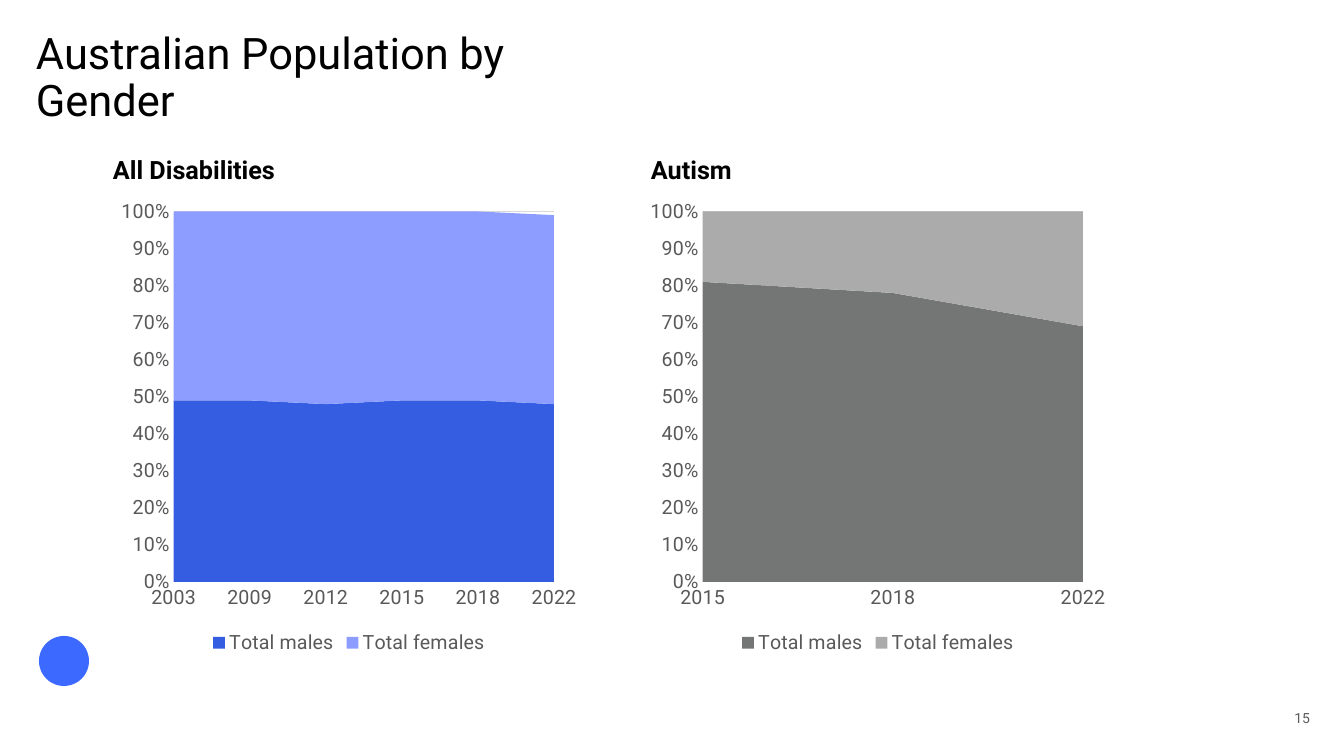
import pptx
import pptx.util
import pptx.chart.data
import pptx.dml.color
import pptx.enum.chart
import pptx.enum.shapes
import pptx.enum.text

SCALE = 914400 / 100.8
FONT = "Roboto"
COLORS = {
    "black": "000000", "gray": "595959", "page": "5B5B5B", "grid": "D9D9D9",
    "mark": "3C69FF", "blue": "355DE2", "sky": "8D9DFF",
    "dark": "747575", "light": "ABABAB",
}


def box(*sizes):
    return [pptx.util.Emu(round(size * SCALE)) for size in sizes]


def style(font, size, color, bold=False):
    font.name = FONT
    font.size = pptx.util.Pt(size)
    font.bold = bold
    font.color.rgb = pptx.dml.color.RGBColor.from_string(COLORS[color])


deck = pptx.Presentation()
deck.slide_width, deck.slide_height = box(1344, 756)
slide = deck.slides.add_slide(deck.slide_layouts[5])
shapes = slide.shapes

# Title
title = shapes.title
title.left, title.top, title.width, title.height = box(36, 32, 596, 136)
frame = title.text_frame
frame.text = "Australian Population by Gender"
frame.word_wrap = True
frame.auto_size = pptx.enum.text.MSO_AUTO_SIZE.NONE
frame.vertical_anchor = pptx.enum.text.MSO_ANCHOR.TOP
frame.margin_left = frame.margin_top = frame.margin_right = frame.margin_bottom = 0
para = frame.paragraphs[0]
para.alignment = pptx.enum.text.PP_ALIGN.LEFT
para.line_spacing = 0.9
style(para.font, 31, "black")

# Plain mark in the corner
mark = shapes.add_shape(pptx.enum.shapes.MSO_SHAPE.OVAL, *box(39, 636, 50, 50))
mark.shadow.inherit = False
mark.fill.solid()
mark.fill.fore_color.rgb = pptx.dml.color.RGBColor.from_string(COLORS["mark"])
mark.line.fill.background()

# Page number
frame = shapes.add_textbox(*box(1264, 706, 46, 20)).text_frame
frame.text = "15"
frame.word_wrap = True
frame.vertical_anchor = pptx.enum.text.MSO_ANCHOR.BOTTOM
frame.margin_left = frame.margin_top = frame.margin_right = frame.margin_bottom = 0
frame.paragraphs[0].alignment = pptx.enum.text.PP_ALIGN.RIGHT
style(frame.paragraphs[0].font, 10, "page")

# Headings with their area charts: heading, lefts, years, shares, fills
panels = [
    ("All Disabilities", 103, 112, ["2003", "2009", "2012", "2015", "2018", "2022"],
     [0.49, 0.49, 0.48, 0.49, 0.49, 0.48], [0.51, 0.51, 0.52, 0.51, 0.51, 0.51],
     ["blue", "sky"]),
    ("Autism", 641, 641, ["2015", "2018", "2022"],
     [0.81, 0.78, 0.69], [0.2, 0.23, 0.31], ["dark", "light"]),
]
for heading, text_left, chart_left, years, males, females, fills in panels:
    frame = shapes.add_textbox(*box(text_left, 149, 408, 40)).text_frame
    frame.text = heading
    frame.word_wrap = True
    frame.auto_size = pptx.enum.text.MSO_AUTO_SIZE.SHAPE_TO_FIT_TEXT
    style(frame.paragraphs[0].font, 18, "black", True)

    data = pptx.chart.data.CategoryChartData(number_format="0%")
    data.categories = years
    data.add_series("Total males", males)
    data.add_series("Total females", females)
    chart = shapes.add_chart(pptx.enum.chart.XL_CHART_TYPE.AREA_STACKED,
                             *box(chart_left, 190, 474, 469), data).chart
    chart.has_title = False
    style(chart.font, 14, "black")
    chart.plots[0].vary_by_categories = False
    for series, fill in zip(chart.plots[0].series, fills):
        series.format.fill.solid()
        series.format.fill.fore_color.rgb = pptx.dml.color.RGBColor.from_string(COLORS[fill])
        series.format.line.fill.background()

    # Axes
    years_axis, share_axis = chart.category_axis, chart.value_axis
    for axis in (years_axis, share_axis):
        axis.major_tick_mark = axis.minor_tick_mark = pptx.enum.chart.XL_TICK_MARK.NONE
        style(axis.tick_labels.font, 14, "gray")
    years_axis.has_major_gridlines = False
    share_axis.has_major_gridlines = True
    share_axis.minimum_scale = 0
    share_axis.maximum_scale = 1
    share_axis.major_unit = 0.1
    share_axis.tick_labels.number_format = "0%"
    share_axis.tick_labels.number_format_is_linked = False
    share_axis.format.line.fill.background()
    for line in (years_axis.format.line, share_axis.major_gridlines.format.line):
        line.width = pptx.util.Pt(0.75)
        line.color.rgb = pptx.dml.color.RGBColor.from_string(COLORS["grid"])

    # Legend
    chart.has_legend = True
    chart.legend.position = pptx.enum.chart.XL_LEGEND_POSITION.BOTTOM
    chart.legend.include_in_layout = False
    style(chart.legend.font, 14, "gray")

deck.save("out.pptx")
